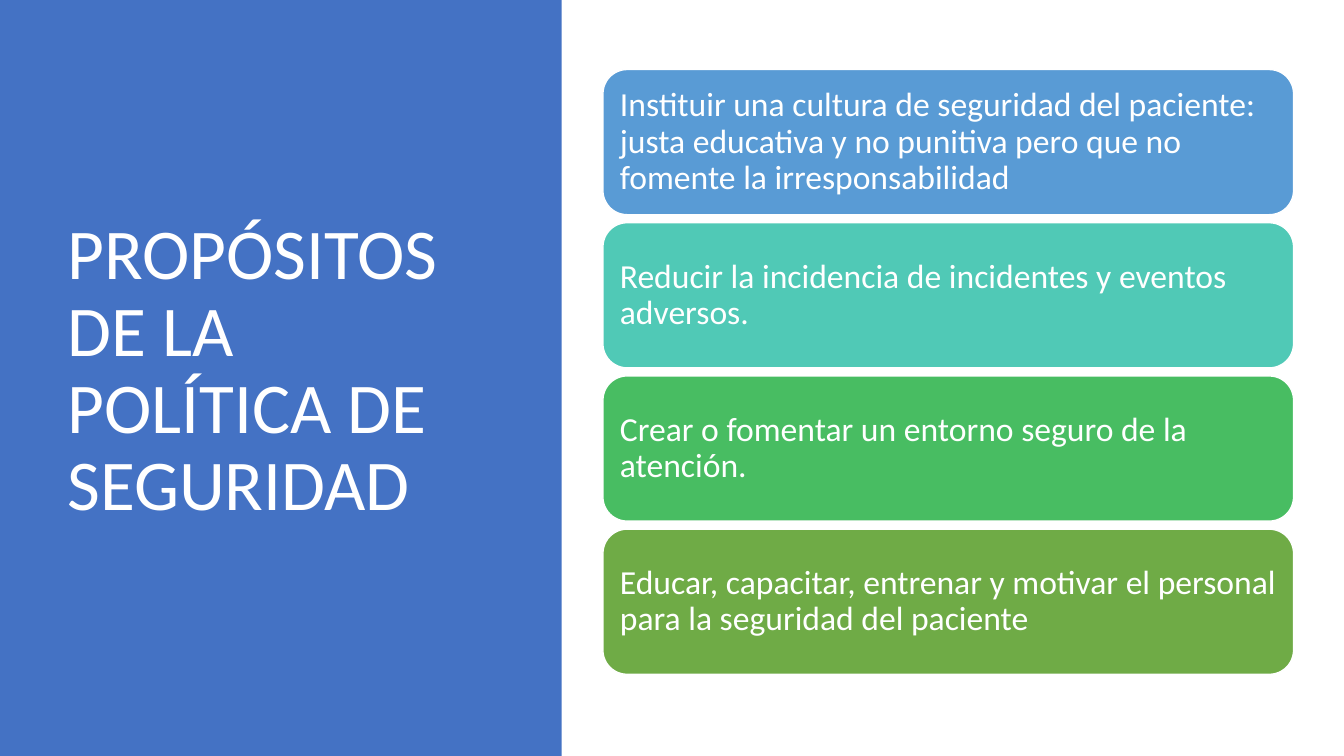
from dataclasses import dataclass

from pptx import Presentation
from pptx.dml.color import RGBColor
from pptx.enum.shapes import MSO_SHAPE as Shape
from pptx.enum.text import MSO_ANCHOR as Anchor, PP_ALIGN as Align
from pptx.util import Inches, Pt


@dataclass(frozen=True)
class Theme:
    font: str = "Calibri"
    title_size: int = 51
    card_size: int = 24
    line_spacing: float = 0.9
    text: str = "FFFFFF"
    panel: str = "4472C4"
    outline: str = "FFFFFF"


THEME = Theme()
WIDTH, HEIGHT = 13.33, 7.5
PANEL_BOX = (0, 0, 5.57, HEIGHT)
CARDS_BOX = (5.98, 0.69, 6.85, 6)
CARD_GAP = 0.08
TITLE = "PROPÓSITOS DE LA POLÍTICA DE SEGURIDAD"
PURPOSES = [
    ("Instituir una cultura de seguridad del paciente: justa educativa "
     "y no punitiva pero que no fomente la irresponsabilidad", "599BD5"),
    ("Reducir la incidencia de incidentes y eventos adversos.", "50C9B6"),
    ("Crear o fomentar un entorno seguro de la atención.", "48BD62"),
    ("Educar, capacitar, entrenar y motivar el personal "
     "para la seguridad del paciente", "6FAB46"),
]


def write(sp, text, size, inset_y):
    tf = sp.text_frame
    tf.word_wrap = True
    tf.vertical_anchor = Anchor.MIDDLE
    tf.margin_left = tf.margin_right = Inches(0.1)
    tf.margin_top = tf.margin_bottom = Inches(inset_y)
    p = tf.paragraphs[0]
    p.alignment = Align.LEFT
    p.line_spacing = THEME.line_spacing
    r = p.add_run()
    r.text = text
    r.font.name = THEME.font
    r.font.size = Pt(size)
    r.font.color.rgb = RGBColor.from_string(THEME.text)


def add_block(s, kind, box, color):
    sp = s.shapes.add_shape(kind, *map(Inches, box))
    sp.shadow.inherit = False
    sp.fill.solid()
    sp.fill.fore_color.rgb = RGBColor.from_string(color)
    sp.line.fill.background()
    return sp


def title_panel(s, box):
    left, top, width, height = box
    add_block(s, Shape.RECTANGLE, box, THEME.panel)
    title_box = (left + 0.57, top + 0.68, width - 1.41, height - 1.48)
    sp = s.shapes.add_textbox(*map(Inches, title_box))
    write(sp, TITLE, THEME.title_size, 0.05)


def purpose_cards(s, box):
    left, top, width, height = box
    pitch = (height + CARD_GAP) / len(PURPOSES)
    for row, (text, color) in enumerate(PURPOSES):
        card = (left, top + row * pitch, width, pitch - CARD_GAP)
        sp = add_block(s, Shape.ROUNDED_RECTANGLE, card, color)
        sp.line.color.rgb = RGBColor.from_string(THEME.outline)
        sp.line.width = Pt(1)
        write(sp, text, THEME.card_size, 0.1)


def main():
    prs = Presentation()
    prs.slide_width, prs.slide_height = Inches(WIDTH), Inches(HEIGHT)
    s = prs.slides.add_slide(prs.slide_layouts[6])
    title_panel(s, PANEL_BOX)
    purpose_cards(s, CARDS_BOX)
    prs.save("out.pptx")


if __name__ == "__main__":
    main()
